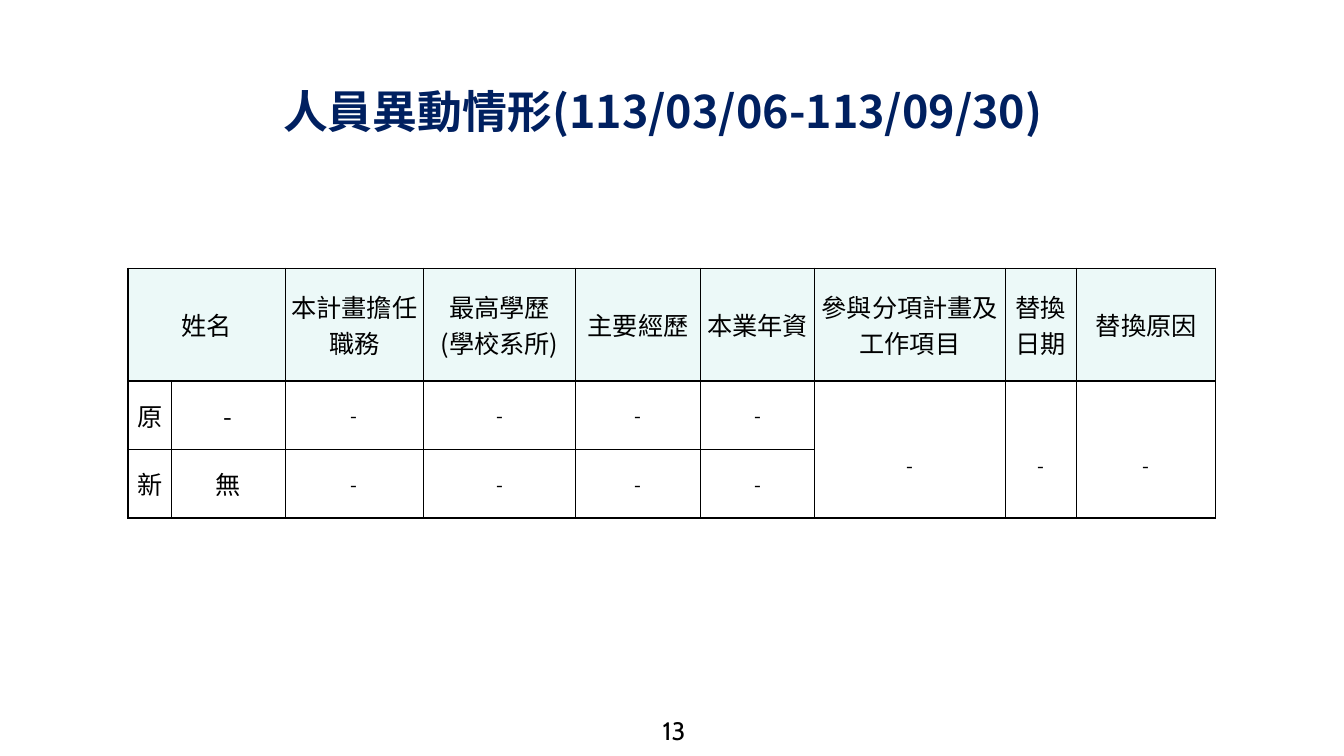
from lxml.etree import SubElement
from pptx import Presentation
from pptx.dml.color import RGBColor
from pptx.enum.text import MSO_ANCHOR, PP_ALIGN
from pptx.oxml.ns import qn
from pptx.util import Inches, Pt

COLORS = {"title": "002060", "text": "000000", "border": "000000",
          "header": "ECF9F8", "body": "FFFFFF"}
CJK = "Noto Sans CJK SC"
COLUMN_WIDTHS = [0.43, 1.13, 1.37, 1.51, 1.24, 1.13, 1.89, 0.71, 1.38]
ROW_HEIGHTS = [1.12, 0.68, 0.68]
STAFF_CHANGES = [
    ["姓名", "", "本計畫擔任職務", "最高學歷\n(學校系所)", "主要經歷", "本業年資",
     "參與分項計畫及工作項目", "替換日期", "替換原因"],
    ["原"] + ["-"] * 8,
    ["新", "無"] + ["-"] * 4 + [""] * 3,
]
SHARED_COLUMNS = range(6, 9)


def add_text(paragraph, text, size, color="text", font=CJK, bold=False):
    run = paragraph.add_run()
    run.text = text
    run.font.size = Pt(size)
    run.font.bold = bold
    run.font.color.rgb = RGBColor.from_string(COLORS[color])
    run.font.name = font
    SubElement(run.font._element, qn("a:ea"), typeface=font)


def add_label(slide, box, text, size, align, wrap, **style):
    frame = slide.shapes.add_textbox(*map(Inches, box)).text_frame
    frame.word_wrap = wrap
    frame.paragraphs[0].alignment = align
    add_text(frame.paragraphs[0], text, size, **style)


def add_borders(cell):
    properties = cell._tc.get_or_add_tcPr()
    for side in ("lnL", "lnR", "lnT", "lnB"):
        line = SubElement(properties, qn(f"a:{side}"), w=str(Pt(1)))
        fill = SubElement(line, qn("a:solidFill"))
        SubElement(fill, qn("a:srgbClr"), val=COLORS["border"])


def fill_cell(cell, text, size, fill):
    add_borders(cell)
    cell.fill.solid()
    cell.fill.fore_color.rgb = RGBColor.from_string(COLORS[fill])
    cell.vertical_anchor = MSO_ANCHOR.MIDDLE
    cell.margin_left = cell.margin_right = Inches(0.02)
    cell.margin_top = cell.margin_bottom = 0
    if not text:
        return
    frame = cell.text_frame
    for index, line in enumerate(text.split("\n")):
        paragraph = frame.add_paragraph() if index else frame.paragraphs[0]
        paragraph.alignment = PP_ALIGN.CENTER
        add_text(paragraph, line, size)


def add_staff_table(slide, box):
    table = slide.shapes.add_table(
        len(ROW_HEIGHTS), len(COLUMN_WIDTHS), *map(Inches, box)).table
    for column, width in zip(table.columns, COLUMN_WIDTHS):
        column.width = Inches(width)
    for row, height in zip(table.rows, ROW_HEIGHTS):
        row.height = Inches(height)
    for r, texts in enumerate(STAFF_CHANGES):
        for c, text in enumerate(texts):
            size = 14 if r and c > 1 else 18
            fill_cell(table.cell(r, c), text, size, "body" if r else "header")
    table.cell(0, 0).merge(table.cell(0, 1))
    for c in SHARED_COLUMNS:
        table.cell(1, c).merge(table.cell(2, c))
        table.cell(1, c).margin_top = Inches(0.3)


def build_staff_slide(deck):
    slide = deck.slides.add_slide(deck.slide_layouts[6])
    add_label(slide, (6.45, 7.05, 0.47, 0.4), "13", 18, PP_ALIGN.CENTER, True,
              font="Cabin")
    add_label(slide, (2.71, 0.78, 7.95, 0.64), "人員異動情形(113/03/06-113/09/30)",
              32, PP_ALIGN.LEFT, False, color="title", bold=True)
    add_staff_table(slide, (1.27, 2.66, sum(COLUMN_WIDTHS), sum(ROW_HEIGHTS)))


def main():
    deck = Presentation()
    deck.slide_width, deck.slide_height = Inches(13.33), Inches(7.5)
    build_staff_slide(deck)
    deck.save("out.pptx")


if __name__ == "__main__":
    main()
